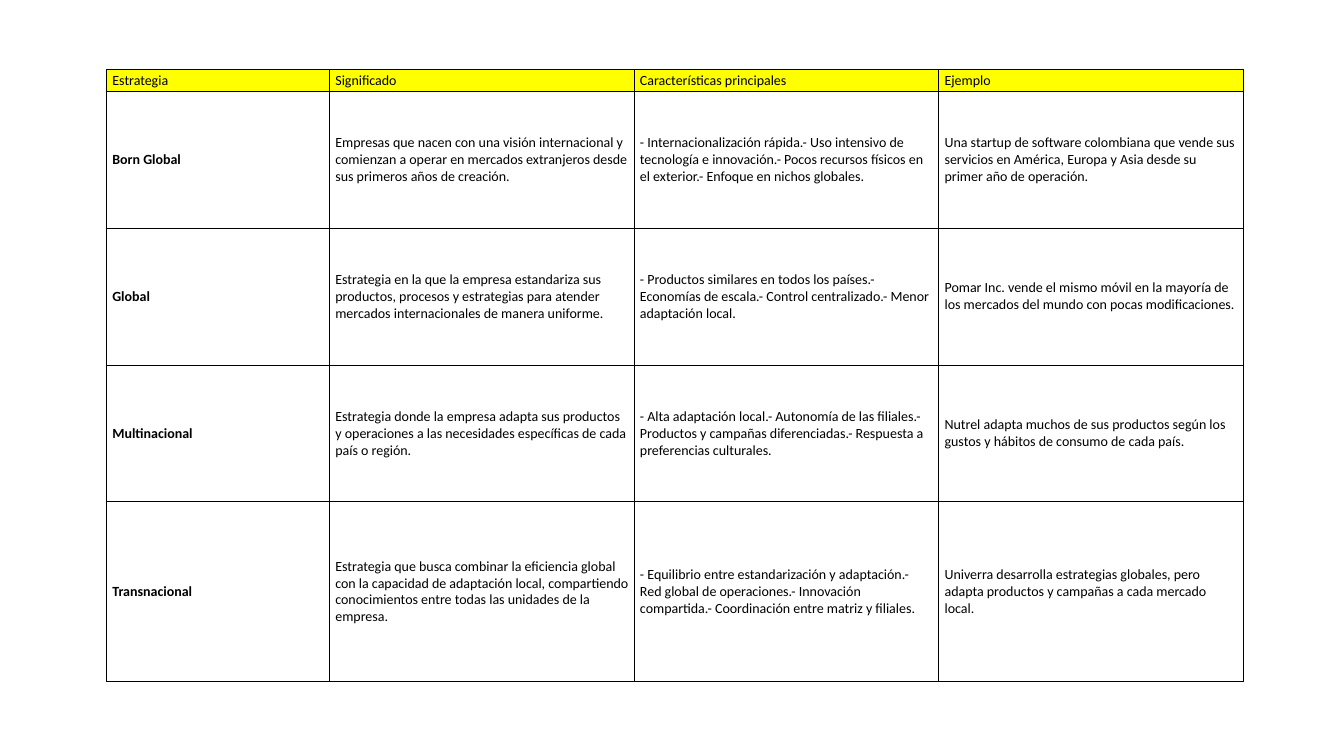
import pptx
import pptx.dml.color
import pptx.enum.text
import pptx.oxml
import pptx.oxml.ns
import pptx.util

Pt = pptx.util.Pt
RGBColor = pptx.dml.color.RGBColor

# Content
ROWS = [
    ("Estrategia", "Significado", "Características principales", "Ejemplo"),
    ("Born Global",
     "Empresas que nacen con una visión internacional y comienzan a operar en mercados "
     "extranjeros desde sus primeros años de creación.",
     "- Internacionalización rápida.- Uso intensivo de tecnología e innovación.- Pocos "
     "recursos físicos en el exterior.- Enfoque en nichos globales.",
     "Una startup de software colombiana que vende sus servicios en América, Europa y Asia "
     "desde su primer año de operación."),
    ("Global",
     "Estrategia en la que la empresa estandariza sus productos, procesos y estrategias "
     "para atender mercados internacionales de manera uniforme.",
     "- Productos similares en todos los países.- Economías de escala.- Control "
     "centralizado.- Menor adaptación local.",
     "Pomar Inc. vende el mismo móvil en la mayoría de los mercados del mundo con pocas "
     "modificaciones."),
    ("Multinacional",
     "Estrategia donde la empresa adapta sus productos y operaciones a las necesidades "
     "específicas de cada país o región.",
     "- Alta adaptación local.- Autonomía de las filiales.- Productos y campañas "
     "diferenciadas.- Respuesta a preferencias culturales.",
     "Nutrel adapta muchos de sus productos según los gustos y hábitos de consumo de cada "
     "país."),
    ("Transnacional",
     "Estrategia que busca combinar la eficiencia global con la capacidad de adaptación "
     "local, compartiendo conocimientos entre todas las unidades de la empresa.",
     "- Equilibrio entre estandarización y adaptación.- Red global de operaciones.- "
     "Innovación compartida.- Coordinación entre matriz y filiales.",
     "Univerra desarrolla estrategias globales, pero adapta productos y campañas a cada "
     "mercado local."),
]

# Format
BLACK = RGBColor(0x00, 0x00, 0x00)
YELLOW = RGBColor(0xFF, 0xFF, 0x00)
LEFT, TOP = 76.2, 49.7
COL_WIDTHS = [159.3] + [217.6] * 3
ROW_HEIGHTS = [15.4] + [97.7] * 3 + [128.4]
CELL_FORMAT = {
    "margin_left": Pt(4.1), "margin_right": Pt(4.1),
    "margin_top": Pt(1.8), "margin_bottom": Pt(1.8),
    "vertical_anchor": pptx.enum.text.MSO_ANCHOR.MIDDLE,
}
FONT_FORMAT = {"name": "Calibri", "size": Pt(10)}


def add_borders(cell):
    tcPr = cell._tc.get_or_add_tcPr()
    for side in ("lnL", "lnR", "lnT", "lnB"):
        tcPr.append(pptx.oxml.parse_xml(
            f'<a:{side} {pptx.oxml.ns.nsdecls("a")} w="{Pt(1)}">'
            f'<a:solidFill><a:srgbClr val="{BLACK}"/></a:solidFill></a:{side}>'))


def fill_cell(cell, text, header, bold):
    for name, value in CELL_FORMAT.items():
        setattr(cell, name, value)
    add_borders(cell)
    if header:
        cell.fill.solid()
        cell.fill.fore_color.rgb = YELLOW
    else:
        cell.fill.background()
    r = cell.text_frame.paragraphs[0].add_run()
    r.text = text
    for name, value in FONT_FORMAT.items():
        setattr(r.font, name, value)
    r.font.bold = bold
    r.font.color.rgb = BLACK


# Slide
prs = pptx.Presentation()
prs.slide_width, prs.slide_height = Pt(960), Pt(540)
s = prs.slides.add_slide(prs.slide_layouts[6])

# Table of strategies
table = s.shapes.add_table(
    len(ROWS), len(COL_WIDTHS), Pt(LEFT), Pt(TOP),
    Pt(sum(COL_WIDTHS)), Pt(sum(ROW_HEIGHTS))).table
table.first_row = table.horz_banding = False
for col, width in zip(table.columns, COL_WIDTHS):
    col.width = Pt(width)
for i, (row, height) in enumerate(zip(table.rows, ROW_HEIGHTS)):
    row.height = Pt(height)
    for j, text in enumerate(ROWS[i]):
        fill_cell(table.cell(i, j), text, header=i == 0, bold=i > 0 and j == 0)

prs.save("out.pptx")
